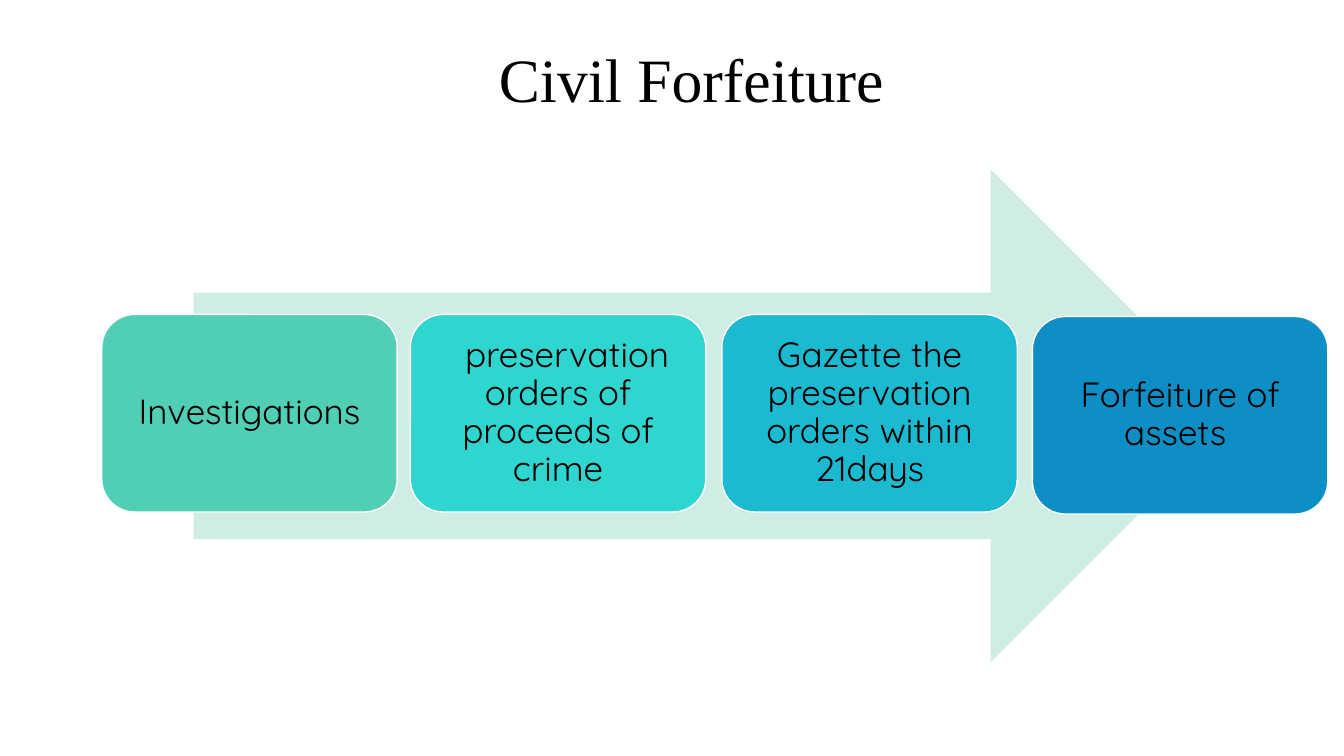
from pptx import Presentation
from pptx.dml.color import RGBColor
from pptx.enum.shapes import MSO_SHAPE
from pptx.enum.text import MSO_ANCHOR, MSO_AUTO_SIZE, PP_ALIGN
from pptx.util import Emu, Pt

PX = 9144  # EMU per px, 100 px to the inch

BLACK = RGBColor(0x00, 0x00, 0x00)
WHITE = RGBColor(0xFF, 0xFF, 0xFF)
MINT = RGBColor(0xD0, 0xED, 0xE5)
GREEN = RGBColor(0x50, 0xCF, 0xB4)
TURQUOISE = RGBColor(0x2F, 0xD6, 0xCF)
CYAN = RGBColor(0x1B, 0xBA, 0xD1)
BLUE = RGBColor(0x0D, 0x8E, 0xC5)

# left, top, fill, first-line indent, text
STEPS = [
    (101, 312, GREEN, 0, "Investigations"),
    (407, 312, TURQUOISE, 18, "preservation orders of proceeds of crime"),
    (716, 312, CYAN, 0, "Gazette the preservation orders within 21days"),
    (1024, 314, BLUE, 0, "Forfeiture of assets "),
]


def px(*sizes):
    return [Emu(size * PX) for size in sizes]


class Deck:
    title_font, title_size = "Times New Roman", Pt(44)
    step_font, step_size = "Quicksand", Pt(25)

    def __init__(self, width, height):
        self.prs = Presentation()
        self.prs.slide_width, self.prs.slide_height = px(width, height)
        layout = self.prs.slide_layouts.get_by_name("Title Only")
        self.slide = self.prs.slides.add_slide(layout)

    def label(self, shape, text, font, size, indent=0):
        frame = shape.text_frame
        frame.word_wrap = True
        frame.auto_size = MSO_AUTO_SIZE.NONE
        frame.vertical_anchor = MSO_ANCHOR.MIDDLE
        para = frame.paragraphs[0]
        para.alignment = PP_ALIGN.CENTER
        para.line_spacing = 0.9
        if indent:
            props = para._p.get_or_add_pPr()
            props.set("marL", "0")
            props.set("indent", str(indent * PX))
        run = para.add_run()
        run.text = text
        run.font.name, run.font.size = font, size
        run.font.color.rgb = BLACK
        return frame

    def title(self, text, *box):
        shape = self.slide.shapes.title
        shape.left, shape.top, shape.width, shape.height = px(*box)
        self.label(shape, text, self.title_font, self.title_size)

    def block(self, kind, fill, *box):
        shape = self.slide.shapes.add_shape(kind, *px(*box))
        shape.shadow.inherit = False
        shape.fill.solid()
        shape.fill.fore_color.rgb = fill
        shape.line.fill.background()
        return shape

    def arrow(self, fill, *box):
        self.block(MSO_SHAPE.RIGHT_ARROW, fill, *box)

    def step(self, left, top, fill, indent, text):
        shape = self.block(MSO_SHAPE.ROUNDED_RECTANGLE, fill,
                           left, top, 293, 196)
        shape.line.color.rgb = WHITE
        shape.line.width = Pt(1)
        frame = self.label(shape, text, self.step_font, self.step_size, indent)
        frame.margin_left, frame.margin_top = px(10, 10)
        frame.margin_right, frame.margin_bottom = px(10, 10)


def main():
    deck = Deck(1333, 750)
    deck.title("Civil Forfeiture", 114, 18, 1144, 128)
    deck.arrow(MINT, 192, 168, 1035, 489)
    for step in STEPS:
        deck.step(*step)
    deck.prs.save("out.pptx")


if __name__ == "__main__":
    main()
